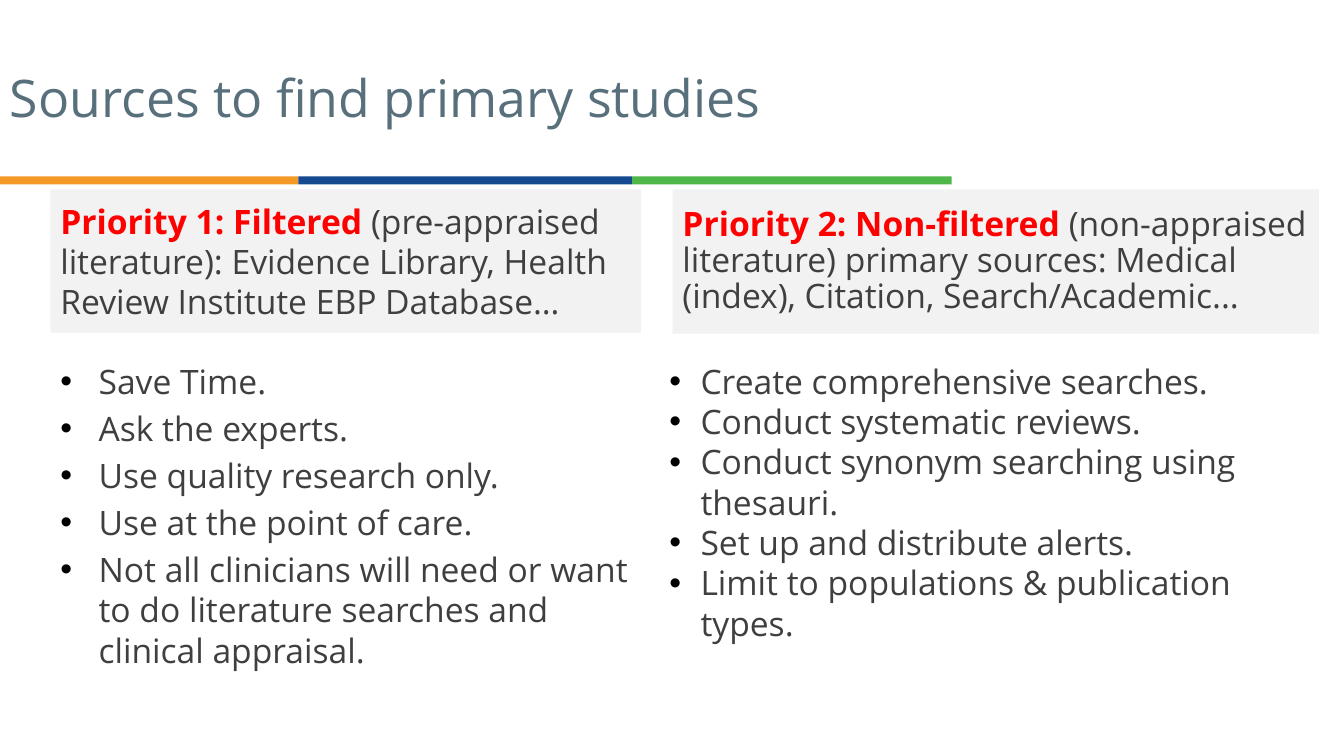
from lxml import etree
from pptx import Presentation
from pptx.dml.color import RGBColor
from pptx.enum.shapes import MSO_SHAPE
from pptx.enum.text import MSO_ANCHOR, MSO_AUTO_SIZE, PP_ALIGN
from pptx.oxml.ns import qn
from pptx.util import Pt

PX = 9144
FONT = "Open Sans"
COLORS = {
    "orange": "F49925", "blue": "154A90", "green": "4EB748",
    "title": "586F7C", "panel": "F2F2F2", "red": "FF0000",
    "text": "3F3F3F", "bullet": "000000",
}

prs = Presentation()
prs.slide_width, prs.slide_height = 1333 * PX, 750 * PX
s = prs.slides.add_slide(prs.slide_layouts[6])


def add_rect(x, y, w, h, color):
    sp = s.shapes.add_shape(MSO_SHAPE.RECTANGLE, x * PX, y * PX, w * PX, h * PX)
    sp.shadow.inherit = False
    sp.fill.solid()
    sp.fill.fore_color.rgb = RGBColor.from_string(COLORS[color])
    sp.line.fill.background()
    return sp


def format_run(r, size, color, bold=False):
    r.font.name = FONT
    r.font.size = Pt(size)
    r.font.bold = bold
    r.font.color.rgb = RGBColor.from_string(COLORS[color])


x = 0
for width, color in [(296, "orange"), (331, "blue"), (317, "green")]:
    add_rect(x, 175, width, 8, color)
    x += width

title = s.shapes.add_textbox(0, 41 * PX, 843 * PX, 118 * PX)
tf = title.text_frame
tf.word_wrap = True
tf.vertical_anchor = MSO_ANCHOR.MIDDLE
p = tf.paragraphs[0]
p.text = "Sources to find primary studies"
p.line_spacing = 0.9
format_run(p.runs[0], 37, "title")

panels = [
    (667, 641, 143, 0.9, "Priority 2: Non-filtered ",
     "(non-appraised literature) primary sources: Medical (index), Citation, Search/Academic..."),
    (50, 586, 142, 1.0, "Priority 1: Filtered ",
     "(pre-appraised literature): Evidence Library, Health Review Institute EBP Database…"),
]
for x, w, h, spacing, heading, detail in panels:
    tf = add_rect(x, 188, w, h, "panel").text_frame
    tf.word_wrap = True
    tf.vertical_anchor = MSO_ANCHOR.MIDDLE
    p = tf.paragraphs[0]
    p.alignment = PP_ALIGN.LEFT
    p.line_spacing = spacing
    for text, color, bold in [(heading, "red", True), (detail, "text", False)]:
        r = p.add_run()
        r.text = text
        format_run(r, 24, color, bold)

lists = [
    (50, 586, 346, 38, 4.8, MSO_AUTO_SIZE.NONE, [
        "Save Time.",
        "Ask the experts.",
        "Use quality research only.",
        "Use at the point of care.",
        "Not all clinicians will need or want to do literature searches and clinical appraisal.",
    ]),
    (654, 667, 293, 31, 0, MSO_AUTO_SIZE.SHAPE_TO_FIT_TEXT, [
        "Create comprehensive searches.",
        "Conduct systematic reviews.",
        "Conduct synonym searching using thesauri.",
        "Set up and distribute alerts.",
        "Limit to populations & publication types.",
    ]),
]
for x, w, h, indent, gap, auto_size, items in lists:
    tf = s.shapes.add_textbox(x * PX, 353 * PX, w * PX, h * PX).text_frame
    tf.word_wrap = True
    tf.auto_size = auto_size
    for i, item in enumerate(items):
        p = tf.add_paragraph() if i else tf.paragraphs[0]
        p.text = item
        pPr = p._p.get_or_add_pPr()
        pPr.set("marL", str(indent * PX))
        pPr.set("indent", str(-indent * PX))
        bullet_color = etree.SubElement(pPr, qn("a:buClr"))
        etree.SubElement(bullet_color, qn("a:srgbClr"), val=COLORS["bullet"])
        etree.SubElement(pPr, qn("a:buFont"), typeface="Arial")
        etree.SubElement(pPr, qn("a:buChar"), char="•")
        if i and gap:
            p.space_before = Pt(gap)
        format_run(p.runs[0], 24, "text")

prs.save("out.pptx")
